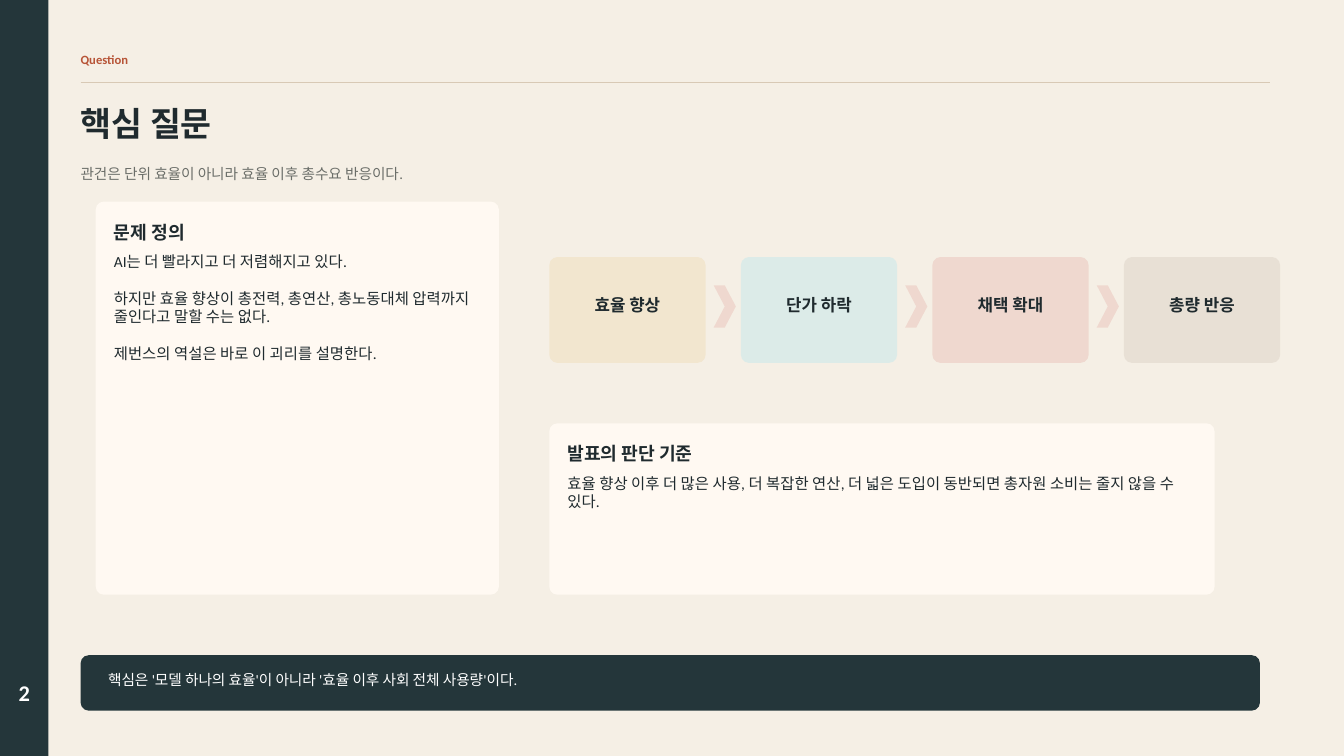
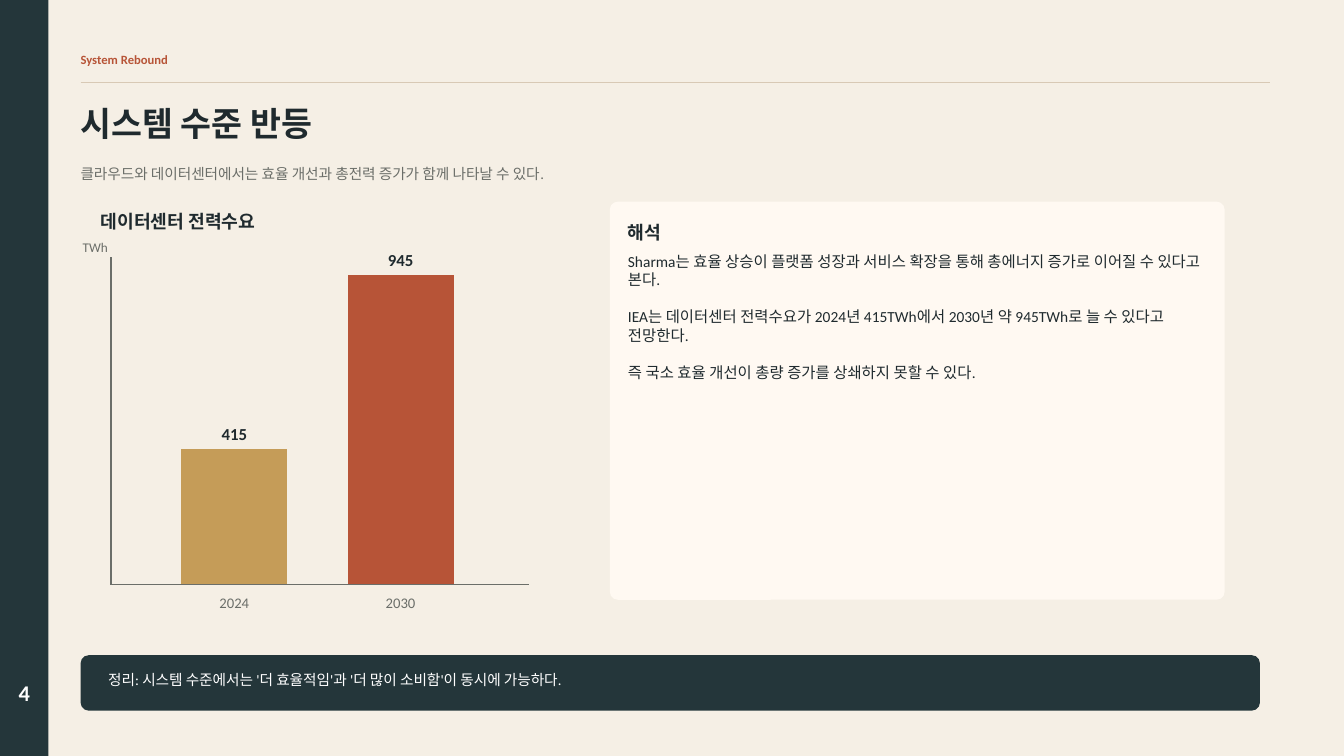
import lxml.etree
import pptx
import pptx.chart.data
import pptx.dml.color
import pptx.enum.chart
import pptx.enum.shapes
import pptx.enum.text
import pptx.oxml.ns
import pptx.util

Pt = pptx.util.Pt
RGB = pptx.dml.color.RGBColor
SHAPE = pptx.enum.shapes.MSO_SHAPE
ALIGN = pptx.enum.text.PP_ALIGN
ANCHOR = pptx.enum.text.MSO_ANCHOR
qn = pptx.oxml.ns.qn

PAPER = RGB(0xF5, 0xEF, 0xE5)
CARD = RGB(0xFF, 0xF9, 0xF2)
PINE = RGB(0x24, 0x36, 0x3A)
INK = RGB(0x1F, 0x2A, 0x2E)
MUTED = RGB(0x6B, 0x6E, 0x69)
RUST = RGB(0xB7, 0x54, 0x37)
GOLD = RGB(0xC5, 0x9C, 0x58)
RULE = RGB(0xD8, 0xC9, 0xB5)
WHITE = RGB(0xFF, 0xFF, 0xFF)
SAND = RGB(0xF2, 0xE6, 0xCF)
MINT = RGB(0xDC, 0xEB, 0xE8)
BLUSH = RGB(0xEF, 0xD8, 0xCF)
STONE = RGB(0xE8, 0xE0, 0xD5)

FONT = "Calibri"
MARGIN = 57.6
RADIUS = 5.76
CARD_PAD = 12.96


def write(frame, text, size=11, color=INK, bold=False, align=ALIGN.LEFT,
          anchor=ANCHOR.MIDDLE, gap=0, inset_left=0, inset_bottom=0):
    """Fill a text frame, one paragraph for each line of text."""
    frame.word_wrap = True
    frame.vertical_anchor = anchor
    frame.margin_left, frame.margin_bottom = Pt(inset_left), Pt(inset_bottom)
    frame.margin_top = frame.margin_right = 0
    for index, line in enumerate(text.split("\n")):
        paragraph = frame.add_paragraph() if index else frame.paragraphs[0]
        paragraph.alignment = align
        if index:
            paragraph.space_before = Pt(gap)
        run = paragraph.add_run()
        run.text = line
        run.font.name, run.font.size, run.font.bold = FONT, Pt(size), bold
        run.font.color.rgb = color


class Deck:
    """Hold the shared style and the slide being drawn."""

    def __init__(self):
        """Start a widescreen presentation."""
        self.presentation = pptx.Presentation()
        self.presentation.slide_width = Pt(960)
        self.presentation.slide_height = Pt(540)
        self.slide = None

    def start(self, number, section, title, subtitle, takeaway):
        """Add a slide with its sidebar, header and takeaway bar."""
        self.slide = self.presentation.slides.add_slide(self.presentation.slide_layouts[6])
        self.slide.background.fill.solid()
        self.slide.background.fill.fore_color.rgb = PAPER
        self.shape(SHAPE.RECTANGLE, 0, 0, 34.56, 540, PINE)
        self.text(number, 5.76, 482.4, 23.04, 25.2, size=16, color=WHITE,
                  bold=True, align=ALIGN.CENTER)
        self.text(section, MARGIN, 32.4, 302.4, 20.16, size=9, color=RUST, bold=True)
        self.line(MARGIN, 59.04, 907.2, 59.04, RULE, 1.2)
        self.text(title, MARGIN, 68.4, 568.8, 39.6, size=24, bold=True)
        self.text(subtitle, MARGIN, 111.6, 633.6, 25.2, size=10.5, color=MUTED)
        bar = self.panel(MARGIN, 468, 842.4, 39.6, PINE)
        write(bar.text_frame, takeaway, size=10.5, color=WHITE,
              inset_left=18, inset_bottom=5.04)

    def shape(self, kind, left, top, width, height, fill):
        """Draw a flat shape without an outline."""
        shape = self.slide.shapes.add_shape(kind, Pt(left), Pt(top), Pt(width), Pt(height))
        shape.shadow.inherit = False
        shape.fill.solid()
        shape.fill.fore_color.rgb = fill
        shape.line.fill.background()
        return shape

    def panel(self, left, top, width, height, fill):
        """Draw a rounded panel with the shared corner radius."""
        panel = self.shape(SHAPE.ROUNDED_RECTANGLE, left, top, width, height, fill)
        panel.adjustments[0] = RADIUS / min(width, height)
        return panel

    def text(self, text, left, top, width, height, **style):
        """Place text in a box without insets."""
        box = self.slide.shapes.add_textbox(Pt(left), Pt(top), Pt(width), Pt(height))
        write(box.text_frame, text, **style)

    def line(self, x1, y1, x2, y2, color, weight):
        """Draw a straight line."""
        line = self.slide.shapes.add_connector(
            pptx.enum.shapes.MSO_CONNECTOR.STRAIGHT, Pt(x1), Pt(y1), Pt(x2), Pt(y2))
        line.line.color.rgb = color
        line.line.width = Pt(weight)
        lxml.etree.SubElement(line.element.spPr, qn("a:effectLst"))

    def card(self, heading, body, left, top, width, height):
        """Draw a card with a heading over its paragraphs."""
        self.panel(left, top, width, height, CARD)
        inner_left, inner_width = left + CARD_PAD, width - 2 * CARD_PAD
        self.text(heading, inner_left, top + 11.52, inner_width, 20.16, size=13, bold=True)
        self.text(body, inner_left, top + 36, inner_width, height - 47.52,
                  anchor=ANCHOR.TOP, gap=13.2)

    def chain(self, steps, left, top):
        """Draw a row of steps joined by chevrons."""
        width, height, pitch = 111.6, 75.6, 136.8
        for index, (label, fill) in enumerate(steps):
            x = left + index * pitch
            if index:
                self.shape(SHAPE.CHEVRON, x - 19.44, top + 20.16, 15.84, 30.24, BLUSH)
            step = self.panel(x, top, width, height, fill)
            write(step.text_frame, label, size=12, bold=True, align=ALIGN.CENTER,
                  inset_bottom=7.92)

    def columns(self, series_name, values, left, top, width, height, plot):
        """Draw a column chart; plot is its left, top, width and height on the slide."""
        data = pptx.chart.data.CategoryChartData()
        data.categories = [category for category, _, _ in values]
        data.add_series(series_name, [value for _, value, _ in values])
        chart = self.slide.shapes.add_chart(
            pptx.enum.chart.XL_CHART_TYPE.COLUMN_CLUSTERED,
            Pt(left), Pt(top), Pt(width), Pt(height), data).chart
        chart.has_legend = chart.has_title = False
        chart.font.name, chart.font.size = FONT, Pt(10.5)
        chart.font.color.rgb = MUTED

        scale = chart.value_axis
        scale.minimum_scale, scale.maximum_scale = 0, 1000
        scale.has_major_gridlines = scale.visible = False
        years = chart.category_axis
        years.format.line.fill.background()
        years.major_tick_mark = pptx.enum.chart.XL_TICK_MARK.OUTSIDE

        bars = chart.plots[0]
        bars.gap_width = 57
        bars.vary_by_categories = False
        bars.has_data_labels = True
        labels = bars.data_labels
        labels.show_value = True
        labels.position = pptx.enum.chart.XL_LABEL_POSITION.OUTSIDE_END
        labels.font.name, labels.font.size, labels.font.bold = FONT, Pt(12), True
        labels.font.color.rgb = INK
        for index, (_, _, color) in enumerate(values):
            fill = bars.series[0].points[index].format.fill
            fill.solid()
            fill.fore_color.rgb = color

        area = chart.element.find(".//" + qn("c:plotArea"))
        for previous in area.findall(qn("c:layout")):
            area.remove(previous)
        layout = lxml.etree.Element(qn("c:layout"))
        area.insert(0, layout)
        manual = lxml.etree.SubElement(layout, qn("c:manualLayout"))
        settings = [("layoutTarget", "inner"), ("xMode", "edge"), ("yMode", "edge"),
                    ("x", (plot[0] - left) / width), ("y", (plot[1] - top) / height),
                    ("w", plot[2] / width), ("h", plot[3] / height)]
        for name, value in settings:
            lxml.etree.SubElement(manual, qn("c:" + name)).set("val", str(value))


def question_slide(deck):
    """Build the key question slide."""
    deck.start("2", "Question", "핵심 질문",
               "관건은 단위 효율이 아니라 효율 이후 총수요 반응이다.",
               "핵심은 '모델 하나의 효율'이 아니라 '효율 이후 사회 전체 사용량'이다.")
    deck.card("문제 정의",
              "AI는 더 빨라지고 더 저렴해지고 있다.\n"
              "하지만 효율 향상이 총전력, 총연산, 총노동대체 압력까지 줄인다고 말할 수는 없다.\n"
              "제번스의 역설은 바로 이 괴리를 설명한다.",
              68.4, 144, 288, 280.8)
    deck.chain([("효율 향상", SAND), ("단가 하락", MINT),
                ("채택 확대", BLUSH), ("총량 반응", STONE)], 392.4, 183.6)
    deck.card("발표의 판단 기준",
              "효율 향상 이후 더 많은 사용, 더 복잡한 연산, 더 넓은 도입이 동반되면 "
              "총자원 소비는 줄지 않을 수 있다.",
              392.4, 302.4, 475.2, 122.4)


def rebound_slide(deck):
    """Build the system rebound slide."""
    deck.start("4", "System Rebound", "시스템 수준 반등",
               "클라우드와 데이터센터에서는 효율 개선과 총전력 증가가 함께 나타날 수 있다.",
               "정리: 시스템 수준에서는 '더 효율적임'과 '더 많이 소비함'이 동시에 가능하다.")
    demand = "데이터센터 전력수요"
    origin, baseline, axis_top = 79.2, 417.6, 183.6
    deck.text(demand, 72, 147.6, 216, 20.16, size=13, bold=True)
    deck.columns(demand, [("2024", 415, GOLD), ("2030", 945, RUST)],
                 origin, 169.2, 298.8, 280.8,
                 plot=(108, axis_top, 237.6, baseline - axis_top))
    deck.line(origin, baseline, 378, baseline, MUTED, 1.1)
    deck.line(origin, axis_top, origin, baseline, MUTED, 1.1)
    deck.text("TWh", 59.04, 169.2, 25.2, 14.4, size=9.5, color=MUTED)
    deck.card("해석",
              "Sharma는 효율 상승이 플랫폼 성장과 서비스 확장을 통해 총에너지 증가로 "
              "이어질 수 있다고 본다.\n"
              "IEA는 데이터센터 전력수요가 2024년 415TWh에서 2030년 약 945TWh로 "
              "늘 수 있다고 전망한다.\n"
              "즉 국소 효율 개선이 총량 증가를 상쇄하지 못할 수 있다.",
              435.6, 144, 439.2, 284.4)


def main():
    """Build and save the presentation."""
    deck = Deck()
    question_slide(deck)
    rebound_slide(deck)
    deck.presentation.save("out.pptx")


if __name__ == "__main__":
    main()
